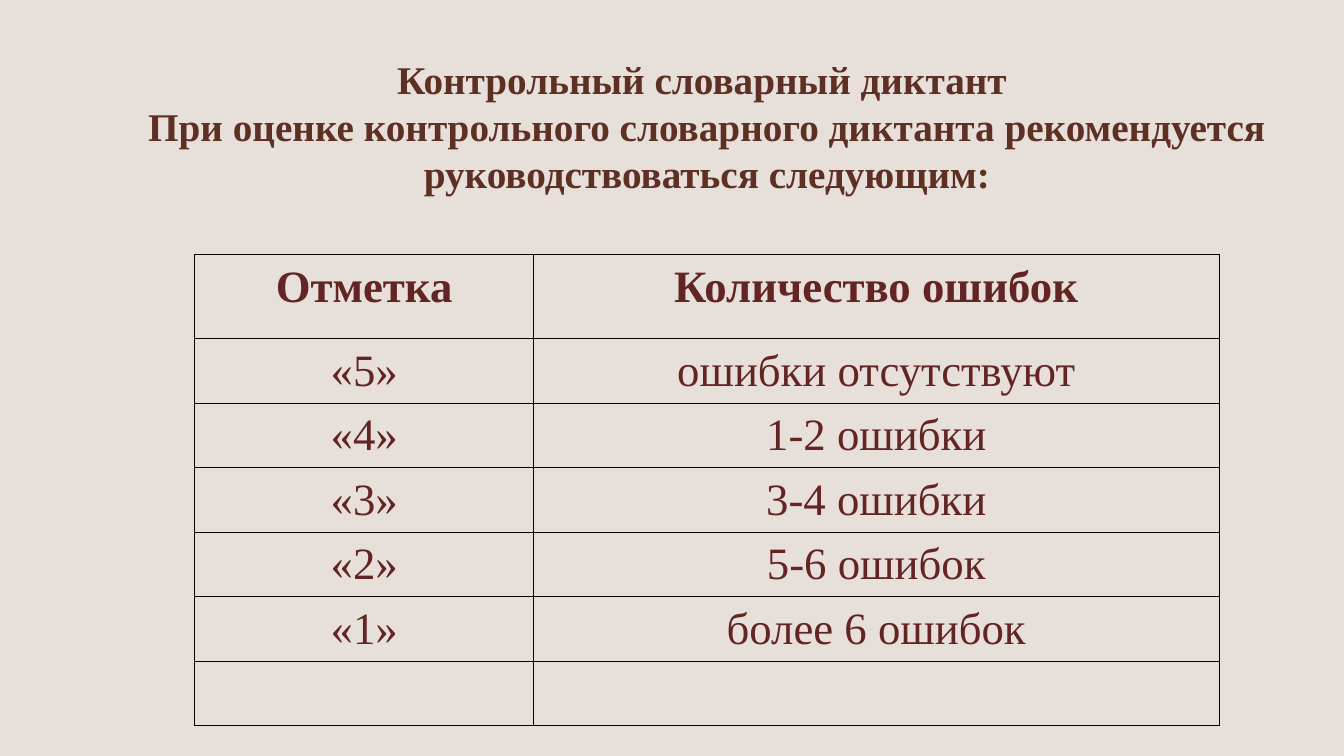
from typing import NamedTuple

from lxml import etree
from pptx import Presentation
from pptx import util as u
from pptx.dml.color import RGBColor
from pptx.enum import text
from pptx.oxml import ns

FONT = "Times New Roman"
COLORS = {"background": "E7DFD9", "title": "5E3023", "table": "632523", "border": "000000"}


class Grade(NamedTuple):
    mark: str
    errors: str


HEADER = Grade("Отметка", "Количество ошибок")
GRADES = [
    Grade("«5»", "ошибки отсутствуют"),
    Grade("«4»", "1-2 ошибки"),
    Grade("«3»", "3-4 ошибки"),
    Grade("«2»", "5-6 ошибок"),
    Grade("«1»", "более 6 ошибок"),
    Grade("", ""),
]


def style_paragraph(p, size: float, color: str, bold: bool, spacing: float) -> None:
    p.alignment = text.PP_ALIGN.CENTER
    p.line_spacing = spacing
    p.font.name = FONT
    p.font.size = u.Pt(size)
    p.font.bold = bold
    p.font.color.rgb = RGBColor.from_string(COLORS[color])


def add_borders(cell) -> None:
    """Give all four sides of a cell a 1 pt line, ahead of the fill as the schema asks."""
    tc_pr = cell._tc.get_or_add_tcPr()
    for i, side in enumerate(("lnL", "lnR", "lnT", "lnB")):
        ln = etree.Element(ns.qn(f"a:{side}"), w=str(u.Pt(1)))
        fill = etree.SubElement(ln, ns.qn("a:solidFill"))
        etree.SubElement(fill, ns.qn("a:srgbClr"), val=COLORS["border"])
        tc_pr.insert(i, ln)


def add_title(s) -> None:
    sp = s.shapes.add_textbox(u.Inches(1.98), u.Inches(-0.46), u.Inches(17.08), u.Inches(4.65))
    tf = sp.text_frame
    tf.word_wrap = True
    tf.vertical_anchor = text.MSO_ANCHOR.MIDDLE
    p = tf.paragraphs[0]
    p.text = (
        "Контрольный словарный диктант \v"
        "При оценке контрольного словарного диктанта рекомендуется "
        "руководствоваться следующим:"
    )
    style_paragraph(p, 42, "title", True, 1)


def add_grade_table(s) -> None:
    rows = [HEADER, *GRADES]
    table = s.shapes.add_table(
        len(rows), 2, u.Inches(2.9), u.Inches(3.79), u.Inches(15.24), u.Inches(7)
    ).table
    table.horz_banding = False
    for column, width in zip(table.columns, (5.04, 10.2)):
        column.width = u.Inches(width)
    for i, grade in enumerate(rows):
        table.rows[i].height = u.Inches(1.25 if grade is HEADER else 0.96)
        for j, value in enumerate(grade):
            cell = table.cell(i, j)
            cell.fill.background()
            cell.margin_left = cell.margin_right = u.Inches(0.11)
            cell.margin_top = cell.margin_bottom = 0
            add_borders(cell)
            if value:
                cell.text = value
                style_paragraph(cell.text_frame.paragraphs[0], 48, "table", grade is HEADER, 1.15)


def main() -> None:
    prs = Presentation()
    prs.slide_width, prs.slide_height = u.Inches(20), u.Inches(11.25)
    s = prs.slides.add_slide(prs.slide_layouts[6])
    s.background.fill.solid()
    s.background.fill.fore_color.rgb = RGBColor.from_string(COLORS["background"])
    add_title(s)
    add_grade_table(s)
    prs.save("out.pptx")


if __name__ == "__main__":
    main()
